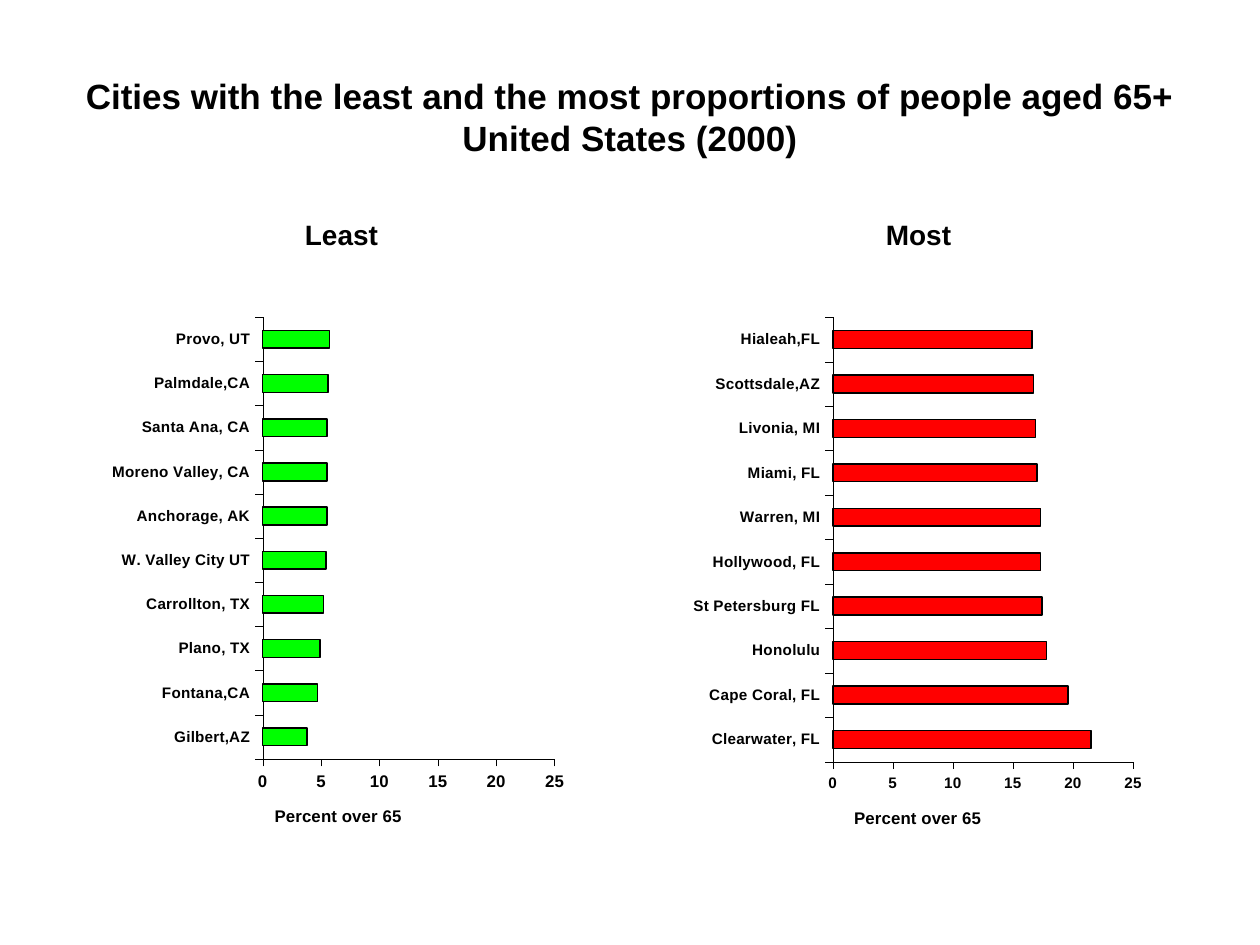
"""Build a slide comparing US cities with the least and the most people aged 65+."""
from lxml.etree import SubElement
from pptx import Presentation
from pptx.chart.data import CategoryChartData
from pptx.dml.color import RGBColor
from pptx.enum.chart import XL_CHART_TYPE, XL_TICK_MARK
from pptx.enum.text import MSO_ANCHOR, PP_ALIGN
from pptx.oxml.ns import qn
from pptx.util import Inches, Pt

BLACK = RGBColor(0, 0, 0)
GREEN = RGBColor(0, 255, 0)
RED = RGBColor(255, 0, 0)
FONT = "Arial"
TITLE = "Cities with the least and the most proportions of people aged 65+\vUnited States (2000)"
AXIS_TITLE = "Percent over 65"

PANELS = [
    {
        "heading": "Least", "color": GREEN, "value_size": 9.6,
        "plot": {"x": 0.332, "y": 0.021, "w": 0.623, "h": 0.833},
        "cities": [
            ("Gilbert,AZ", 3.8), ("Fontana,CA", 4.7), ("Plano, TX", 4.9),
            ("Carrollton, TX", 5.2), ("W. Valley City UT", 5.4),
            ("Anchorage, AK", 5.5), ("Moreno Valley, CA", 5.5),
            ("Santa Ana, CA", 5.5), ("Palmdale,CA", 5.6), ("Provo, UT", 5.7),
        ],
    },
    {
        "heading": "Most", "color": RED, "value_size": 8.7,
        "plot": {"x": 0.317, "y": 0.021, "w": 0.641, "h": 0.838},
        "cities": [
            ("Clearwater, FL", 21.5), ("Cape Coral, FL", 19.6), ("Honolulu", 17.8),
            ("St Petersburg FL", 17.4), ("Hollywood, FL", 17.3),
            ("Warren, MI", 17.3), ("Miami, FL", 17), ("Livonia, MI", 16.9),
            ("Scottsdale,AZ", 16.7), ("Hialeah,FL", 16.6),
        ],
    },
]
PANEL_LEFT, PANEL_STEP, PANEL_WIDTH = 0.5, 4.58, 4.42
CHART_WIDTH = 3.72


def style_font(font, size):
    font.name = FONT
    font.size = Pt(size)
    font.bold = True
    font.color.rgb = BLACK


def style_text(text_frame, size):
    text_frame.word_wrap = True
    for paragraph in text_frame.paragraphs:
        paragraph.alignment = PP_ALIGN.CENTER
        for run in paragraph.runs:
            style_font(run.font, size)


def style_axis(axis, size):
    axis.has_major_gridlines = False
    axis.major_tick_mark = XL_TICK_MARK.OUTSIDE
    axis.minor_tick_mark = XL_TICK_MARK.NONE
    axis.format.line.color.rgb = BLACK
    axis.format.line.width = Pt(0.22)
    style_font(axis.tick_labels.font, size)


def set_plot_layout(chart, plot):
    plot_area = chart.element.find(".//" + qn("c:plotArea"))
    for layout in plot_area.findall(qn("c:layout")):
        plot_area.remove(layout)
    layout = SubElement(plot_area, qn("c:layout"))
    plot_area.insert(0, layout)
    manual = SubElement(layout, qn("c:manualLayout"))
    settings = {"layoutTarget": "inner", "xMode": "edge", "yMode": "edge", **plot}
    for name, value in settings.items():
        SubElement(manual, qn(f"c:{name}")).set("val", str(value))


def add_heading(slide, left, text):
    heading = slide.shapes.add_textbox(
        Inches(left), Inches(1.68), Inches(PANEL_WIDTH), Inches(0.7))
    heading.text_frame.text = text
    style_text(heading.text_frame, 16)


def add_city_chart(slide, left, panel):
    data = CategoryChartData()
    data.categories = [city for city, _ in panel["cities"]]
    data.add_series("Series 1", [percent for _, percent in panel["cities"]])
    chart = slide.shapes.add_chart(
        XL_CHART_TYPE.BAR_CLUSTERED, Inches(left), Inches(2.43),
        Inches(CHART_WIDTH), Inches(4.21), data).chart
    chart.has_legend = False
    chart.has_title = False
    style_font(chart.font, 15.4)

    style_axis(chart.category_axis, 8.7)
    value_axis = chart.value_axis
    style_axis(value_axis, panel["value_size"])
    value_axis.minimum_scale = 0
    value_axis.maximum_scale = 25
    value_axis.major_unit = 5
    value_axis.axis_title.text_frame.text = AXIS_TITLE
    style_text(value_axis.axis_title.text_frame, 9.6)

    bars = chart.plots[0]
    bars.gap_width = 150
    bars.vary_by_categories = False
    series_format = bars.series[0].format
    series_format.fill.solid()
    series_format.fill.fore_color.rgb = panel["color"]
    series_format.line.color.rgb = BLACK
    series_format.line.width = Pt(0.87)
    set_plot_layout(chart, panel["plot"])


def main():
    presentation = Presentation()
    presentation.slide_width = Inches(10)
    presentation.slide_height = Inches(7.5)
    slide = presentation.slides.add_slide(presentation.slide_layouts[5])

    title = slide.shapes.title
    title.left, title.top = Inches(0.5), Inches(0.3)
    title.width, title.height = Inches(9), Inches(1.25)
    title.text_frame.text = TITLE
    title.text_frame.vertical_anchor = MSO_ANCHOR.MIDDLE
    style_text(title.text_frame, 20)

    for index, panel in enumerate(PANELS):
        left = PANEL_LEFT + index * PANEL_STEP
        add_heading(slide, left, panel["heading"])
        add_city_chart(slide, left + (PANEL_WIDTH - CHART_WIDTH) / 2, panel)

    presentation.save("out.pptx")


if __name__ == "__main__":
    main()
